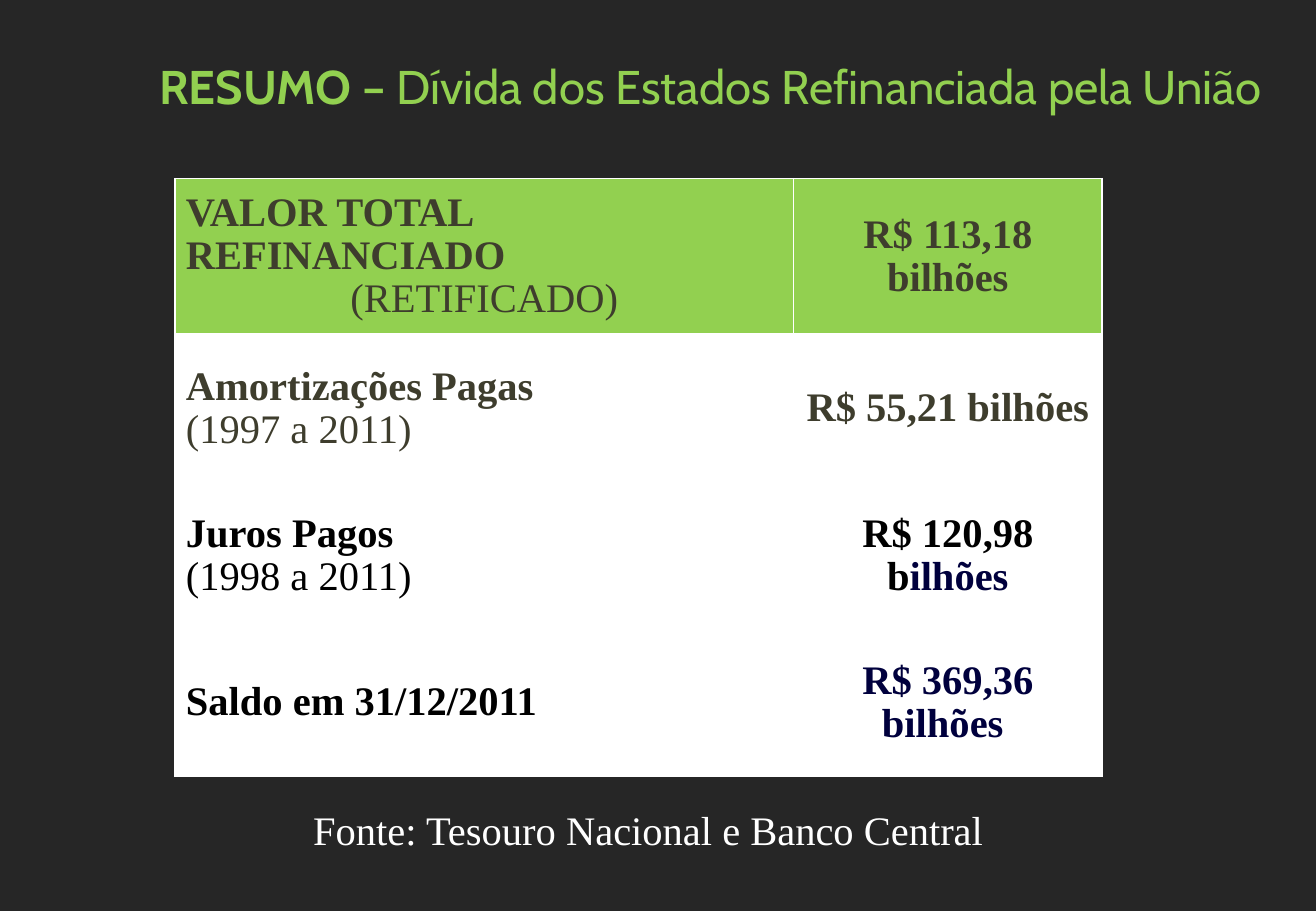
from dataclasses import dataclass

from lxml import etree
from pptx import Presentation
from pptx.dml.color import RGBColor
from pptx.enum.text import MSO_ANCHOR, PP_ALIGN
from pptx.oxml.ns import qn
from pptx.util import Inches, Pt

LEFT, CENTER = PP_ALIGN.LEFT, PP_ALIGN.CENTER
MIDDLE = MSO_ANCHOR.MIDDLE
DARK = RGBColor(0x26, 0x26, 0x26)
GREEN = RGBColor(0x92, 0xD0, 0x50)
OLIVE = RGBColor(0x3E, 0x3D, 0x2D)
NAVY = RGBColor(0x00, 0x00, 0x3D)
BLACK = RGBColor(0x00, 0x00, 0x00)
WHITE = RGBColor(0xFF, 0xFF, 0xFF)
SERIF, SANS = "Times New Roman", "Cabin"


@dataclass
class Run:
    text: str
    color: RGBColor
    bold: bool = True


@dataclass
class Para:
    runs: list[Run]
    align: PP_ALIGN = LEFT


@dataclass
class Row:
    height: float
    fill: RGBColor
    label: list[Para]
    value: list[Run]


ROWS = [
    Row(1.29, GREEN,
        [Para([Run("VALOR TOTAL REFINANCIADO", OLIVE)]),
         Para([Run("(RETIFICADO)", OLIVE, False)], CENTER)],
        [Run("R$ 113,18 bilhões", OLIVE)]),
    Row(1.21, WHITE,
        [Para([Run("Amortizações Pagas", OLIVE)]),
         Para([Run("(1997 a 2011)", OLIVE, False)])],
        [Run("R$ 55,21 bilhões", OLIVE)]),
    Row(1.21, WHITE,
        [Para([Run("Juros Pagos", BLACK)]),
         Para([Run("(1998 a 2011)", BLACK, False)])],
        [Run("R$ 120,98 b", BLACK), Run("ilhões", NAVY)]),
    Row(1.21, WHITE,
        [Para([Run("Saldo em 31/12/2011", BLACK)])],
        [Run("R$ 369,36 bilhões ", NAVY)]),
]
COLUMNS = [5.09, 2.54]


def write(tf, paras: list[Para], *, font: str = SERIF, size: float = 24,
          spacing: float = 1.0) -> None:
    for i, para in enumerate(paras):
        p = tf.add_paragraph() if i else tf.paragraphs[0]
        p.alignment = para.align
        p.line_spacing = spacing
        for run in para.runs:
            r = p.add_run()
            r.text = run.text
            r.font.name = font
            r.font.size = Pt(size)
            r.font.bold = run.bold
            r.font.color.rgb = run.color


def add_text(slide, left: float, top: float, width: float, height: float,
             runs: list[Run], **fmt) -> None:
    sp = slide.shapes.add_textbox(Inches(left), Inches(top), Inches(width), Inches(height))
    sp.text_frame.word_wrap = True
    write(sp.text_frame, [Para(runs, CENTER)], **fmt)


def set_borders(cell, bottom: float) -> None:
    tc_pr = cell._tc.get_or_add_tcPr()
    for side, width in (("L", 1), ("R", 1), ("T", 1), ("B", bottom)):
        ln = etree.SubElement(tc_pr, qn(f"a:ln{side}"), w=str(Pt(width)))
        fill = etree.SubElement(ln, qn("a:solidFill"))
        etree.SubElement(fill, qn("a:srgbClr"), val=str(WHITE))


def fill_cell(cell, paras: list[Para], fill: RGBColor, bottom: float) -> None:
    set_borders(cell, bottom)
    cell.fill.solid()
    cell.fill.fore_color.rgb = fill
    cell.vertical_anchor = MIDDLE
    cell.margin_left = cell.margin_right = Inches(0.09)
    cell.margin_top = cell.margin_bottom = Inches(0.05)
    write(cell.text_frame, paras, spacing=0.96)


def add_summary(slide, left: float, top: float) -> None:
    height = sum(row.height for row in ROWS)
    table = slide.shapes.add_table(
        len(ROWS), len(COLUMNS), Inches(left), Inches(top),
        Inches(sum(COLUMNS)), Inches(height)).table
    for column, width in zip(table.columns, COLUMNS):
        column.width = Inches(width)
    for i, row in enumerate(ROWS):
        table.rows[i].height = Inches(row.height)
        bottom = 1 if i else 3
        for j, paras in enumerate((row.label, [Para(row.value, CENTER)])):
            fill_cell(table.cell(i, j), paras, row.fill, bottom)


def main() -> None:
    prs = Presentation()
    prs.slide_width, prs.slide_height = Inches(10.83), Inches(7.5)
    slide = prs.slides.add_slide(prs.slide_layouts[6])
    slide.background.fill.solid()
    slide.background.fill.fore_color.rgb = DARK
    title = [Run("RESUMO – ", GREEN),
             Run("Dívida dos Estados Refinanciada pela União", GREEN, False)]
    add_text(slide, 0.61, 0.42, 10.47 - 0.25 * 0, 0.57, title, font=SANS, size=28)
    add_text(slide, 1.95, 6.58, 6.77, 0.5,
             [Run("Fonte: Tesouro Nacional e Banco Central", WHITE, False)])
    add_summary(slide, 1.44, 1.47)
    prs.save("out.pptx")


if __name__ == "__main__":
    main()
